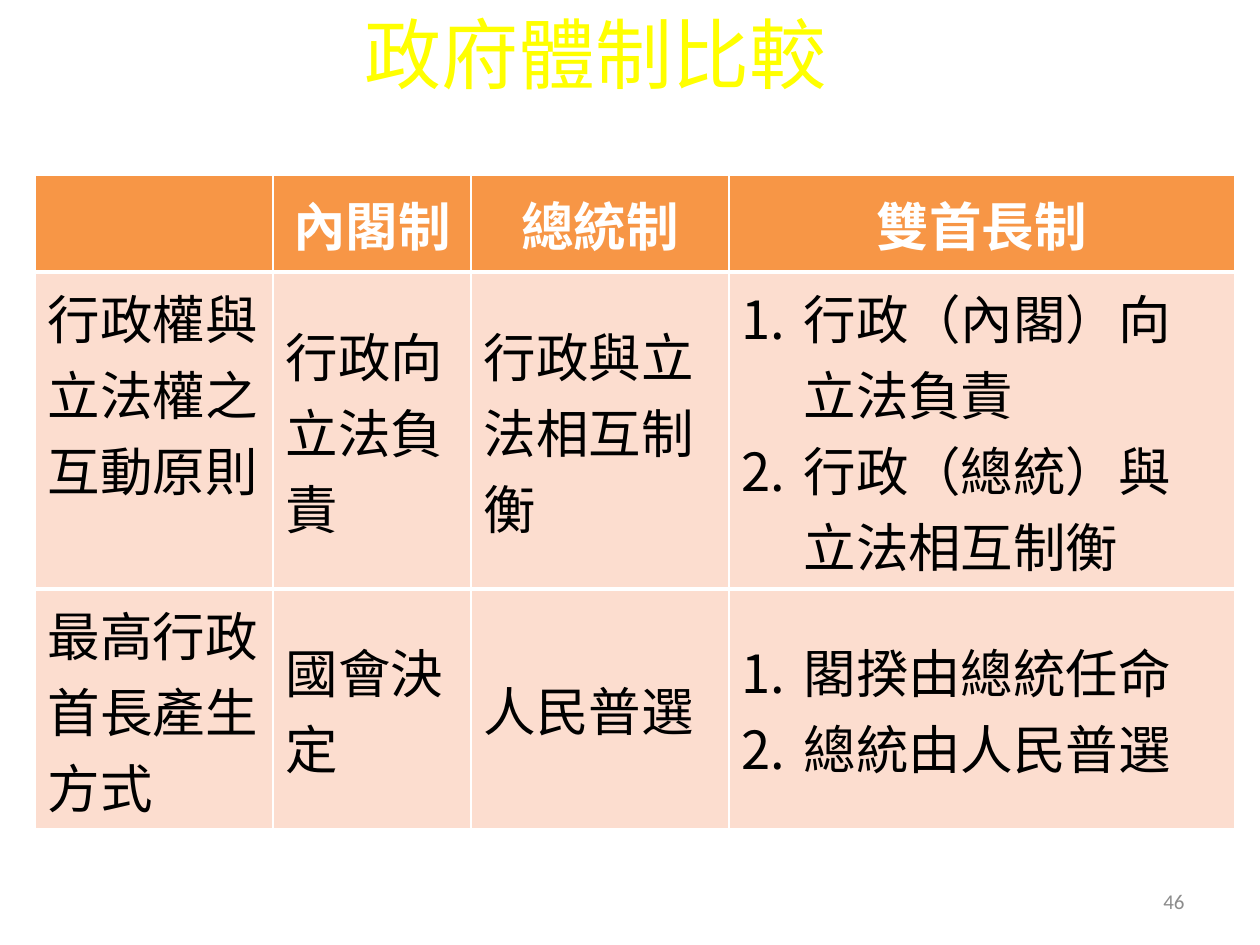
from lxml import etree
from pptx import Presentation
from pptx.dml.color import RGBColor
from pptx.enum.text import MSO_ANCHOR, MSO_AUTO_SIZE, PP_ALIGN
from pptx.oxml.ns import qn
from pptx.util import Emu, Pt

TITLE = "政府體制比較"
PAGE_NUMBER = "46"
HEADER = ["", "內閣制", "總統制", "雙首長制"]
BODY = [
    ["行政權與立法權之互動原則", "行政向立法負責", "行政與立法相互制衡",
     ["行政（內閣）向立法負責", "行政（總統）與立法相互制衡"]],
    ["最高行政首長產生方式", "國會決定", "人民普選",
     ["閣揆由總統任命", "總統由人民普選"]],
]
COLUMN_WIDTHS = [238, 198, 258, 506]
ROW_HEIGHTS = [97, 317, 240]

YELLOW = RGBColor(0xFF, 0xFF, 0x00)
WHITE = RGBColor(0xFF, 0xFF, 0xFF)
BLACK = RGBColor(0x00, 0x00, 0x00)
GREY = RGBColor(0x8C, 0x8C, 0x8C)
ORANGE = RGBColor(0xF7, 0x96, 0x46)
PEACH = RGBColor(0xFC, 0xDD, 0xCF)
LATIN_FONT = "Calibri"
TABLE_FONT = "Noto Sans CJK SC"
LEFT, CENTER, RIGHT = PP_ALIGN.LEFT, PP_ALIGN.CENTER, PP_ALIGN.RIGHT
TOP, MIDDLE = MSO_ANCHOR.TOP, MSO_ANCHOR.MIDDLE
NO_AUTOFIT = MSO_AUTO_SIZE.NONE
PX_PER_INCH = 126
NUMBER_INDENT = 62


def px(count):
    return Emu(round(count * 914400 / PX_PER_INCH))


def place(shape, left, top, width, height):
    shape.left, shape.top = px(left), px(top)
    shape.width, shape.height = px(width), px(height)


def style(paragraph, size, font_name, color, align, bold=False):
    paragraph.alignment = align
    for run in paragraph.runs:
        font = run.font
        font.size, font.name, font.bold = Pt(size), font_name, bold
        font.color.rgb = color
        etree.SubElement(run._r.rPr, qn("a:ea"), typeface=TABLE_FONT)


def number(paragraph):
    properties = paragraph._p.get_or_add_pPr()
    properties.set("marL", str(px(NUMBER_INDENT)))
    properties.set("indent", str(-px(NUMBER_INDENT)))
    etree.SubElement(properties, qn("a:buFont"), typeface=TABLE_FONT)
    etree.SubElement(properties, qn("a:buAutoNum"), type="arabicPeriod")


def set_borders(cell, top_width, bottom_width):
    properties = cell._tc.get_or_add_tcPr()
    widths = [("lnL", 1), ("lnR", 1), ("lnT", top_width), ("lnB", bottom_width)]
    for index, (side, width) in enumerate(widths):
        line = etree.Element(qn(f"a:{side}"), w=str(Pt(width)))
        fill = etree.SubElement(line, qn("a:solidFill"))
        etree.SubElement(fill, qn("a:srgbClr"), val=str(WHITE))
        properties.insert(index, line)


def fill_cell(cell, content, row, column):
    is_header = row == 0
    numbered = isinstance(content, list)
    cell.fill.solid()
    cell.fill.fore_color.rgb = ORANGE if is_header else PEACH
    cell.vertical_anchor = TOP if column == 0 and not is_header else MIDDLE
    set_borders(cell, 1 if is_header else 3, 1 if row == len(BODY) else 3)
    cell.text_frame.text = "\n".join(content) if numbered else content
    for paragraph in cell.text_frame.paragraphs:
        if numbered:
            number(paragraph)
        style(paragraph, 30, TABLE_FONT, WHITE if is_header else BLACK,
              CENTER if is_header else LEFT, is_header)


def main():
    prs = Presentation()
    prs.slide_width, prs.slide_height = px(1260), px(945)
    slide = prs.slides.add_slide(prs.slide_layouts[5])

    title = slide.shapes.title
    place(title, 352, 0, 724, 106)
    title.text_frame.text = TITLE
    title.text_frame.auto_size = NO_AUTOFIT
    title.text_frame.vertical_anchor = MIDDLE
    style(title.text_frame.paragraphs[0], 44, LATIN_FONT, YELLOW, LEFT)

    page = slide.shapes.add_textbox(px(903), px(876), px(294), px(50)).text_frame
    page.word_wrap = True
    page.vertical_anchor = MIDDLE
    page.text = PAGE_NUMBER
    style(page.paragraphs[0], 12, LATIN_FONT, GREY, RIGHT)

    rows = [HEADER] + BODY
    comparison = slide.shapes.add_table(
        len(rows), len(HEADER), px(35), px(175),
        px(sum(COLUMN_WIDTHS)), px(sum(ROW_HEIGHTS))).table
    for column, width in zip(comparison.columns, COLUMN_WIDTHS):
        column.width = px(width)
    for row, height in zip(comparison.rows, ROW_HEIGHTS):
        row.height = px(height)
    for r, contents in enumerate(rows):
        for c, content in enumerate(contents):
            fill_cell(comparison.cell(r, c), content, r, c)

    prs.save("out.pptx")


if __name__ == "__main__":
    main()
